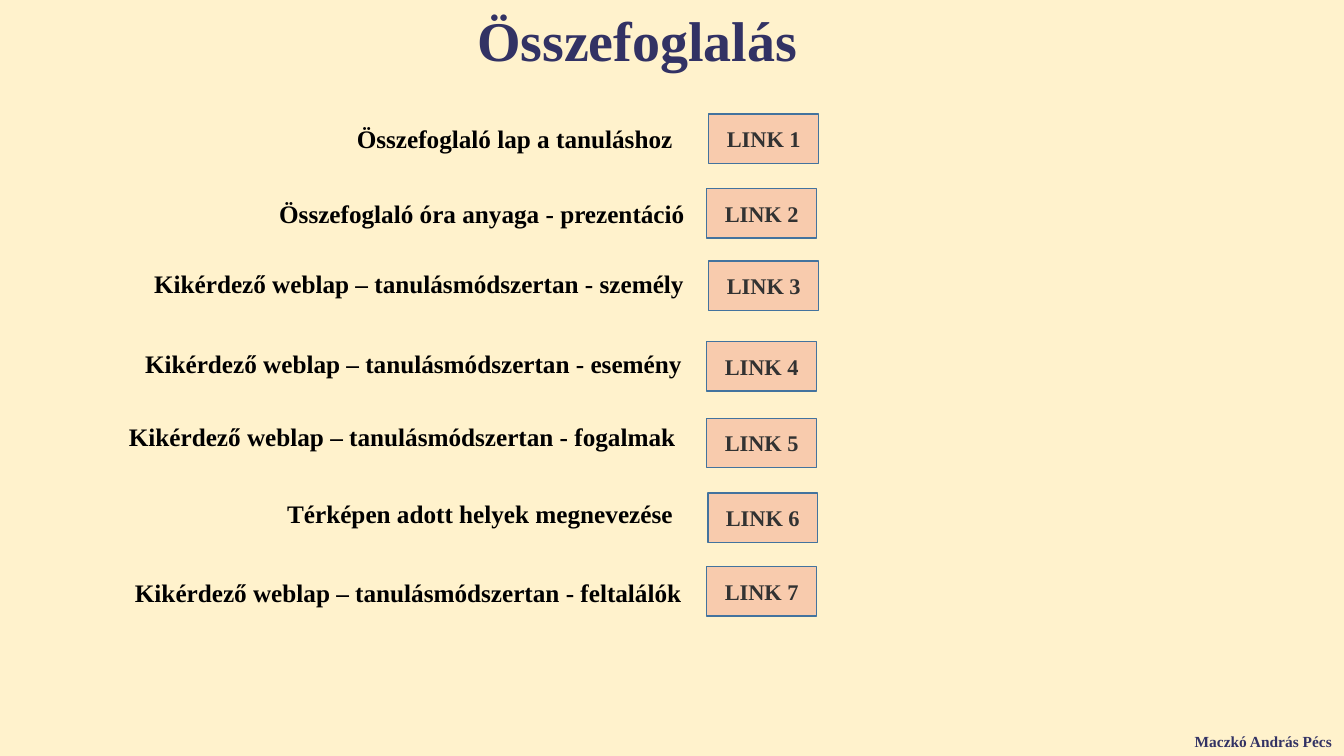
import dataclasses

import pptx
import pptx.dml.color
import pptx.enum.shapes
import pptx.enum.text
import pptx.util

PX = 9144  # EMU per px, 100 px to the inch
ALIGN = pptx.enum.text.PP_ALIGN
ANCHOR = pptx.enum.text.MSO_ANCHOR


@dataclasses.dataclass(frozen=True)
class Theme:
    font: str = "Times New Roman"
    background: str = "FFF2CC"
    heading: str = "323264"
    label: str = "000000"
    button_text: str = "323232"
    button_fill: str = "F8CBAD"
    button_line: str = "43739E"
    title_size: int = 40
    label_size: int = 18
    button_size: int = 16
    credit_size: int = 11


THEME = Theme()

BUTTON_W, BUTTON_H = 109, 49

# label, its box (left, top, width), its button (left, top)
ROWS = [
    ("Összefoglaló lap a tanuláshoz", (344, 117, 341), (703, 113)),
    ("Összefoglaló óra anyaga - prezentáció", (267, 192, 441), (701, 187)),
    ("Kikérdező weblap – tanulásmódszertan - személy", (143, 261, 561), (703, 259)),
    ("Kikérdező weblap – tanulásmódszertan - esemény", (134, 341, 561), (701, 339)),
    ("Kikérdező weblap – tanulásmódszertan - fogalmak", (118, 413, 578), (701, 415)),
    ("Térképen adott helyek megnevezése", (275, 489, 411), (702, 489)),
    ("Kikérdező weblap – tanulásmódszertan - feltalálók", (124, 568, 573), (701, 562)),
]


def rgb(value):
    return pptx.dml.color.RGBColor.from_string(value)


def emu(box):
    return [pptx.util.Emu(length * PX) for length in box]


def write(sp, text, *, size, color, align=ALIGN.LEFT, anchor=ANCHOR.TOP):
    tf = sp.text_frame
    tf.word_wrap = True
    tf.auto_size = pptx.enum.text.MSO_AUTO_SIZE.NONE
    tf.vertical_anchor = anchor
    p = tf.paragraphs[0]
    p.alignment = align
    r = p.add_run()
    r.text = text
    r.font.name = THEME.font
    r.font.size = pptx.util.Pt(size)
    r.font.bold = True
    r.font.color.rgb = rgb(color)


def add_title(s, box, text):
    sp = s.shapes.title
    sp.left, sp.top, sp.width, sp.height = emu(box)
    write(sp, text, size=THEME.title_size, color=THEME.heading, align=ALIGN.CENTER)


def add_label(s, box, text, **style):
    write(s.shapes.add_textbox(*emu(box)), text, **style)


def add_button(s, box, text):
    sp = s.shapes.add_shape(pptx.enum.shapes.MSO_SHAPE.RECTANGLE, *emu(box))
    sp.shadow.inherit = False
    sp.fill.solid()
    sp.fill.fore_color.rgb = rgb(THEME.button_fill)
    sp.line.color.rgb = rgb(THEME.button_line)
    sp.line.width = pptx.util.Pt(1)
    write(sp, text, size=THEME.button_size, color=THEME.button_text,
          align=ALIGN.CENTER, anchor=ANCHOR.MIDDLE)


def add_link_rows(s, rows):
    for number, (text, label_box, button_at) in enumerate(rows, 1):
        add_label(s, (*label_box, 40), text, size=THEME.label_size, color=THEME.label)
        add_button(s, (*button_at, BUTTON_W, BUTTON_H), f"LINK {number}")


def add_summary_slide(prs):
    s = prs.slides.add_slide(prs.slide_layouts.get_by_name("Title Only"))
    s.background.fill.solid()
    s.background.fill.fore_color.rgb = rgb(THEME.background)
    add_title(s, (184, 0, 896, 77), "Összefoglalás")
    add_link_rows(s, ROWS)
    add_label(s, (1175, 721, 159, 29), "Maczkó András Pécs",
              size=THEME.credit_size, color=THEME.heading)


def main():
    prs = pptx.Presentation()
    prs.slide_width, prs.slide_height = emu((1333, 750))
    add_summary_slide(prs)
    prs.save("out.pptx")


if __name__ == "__main__":
    main()
